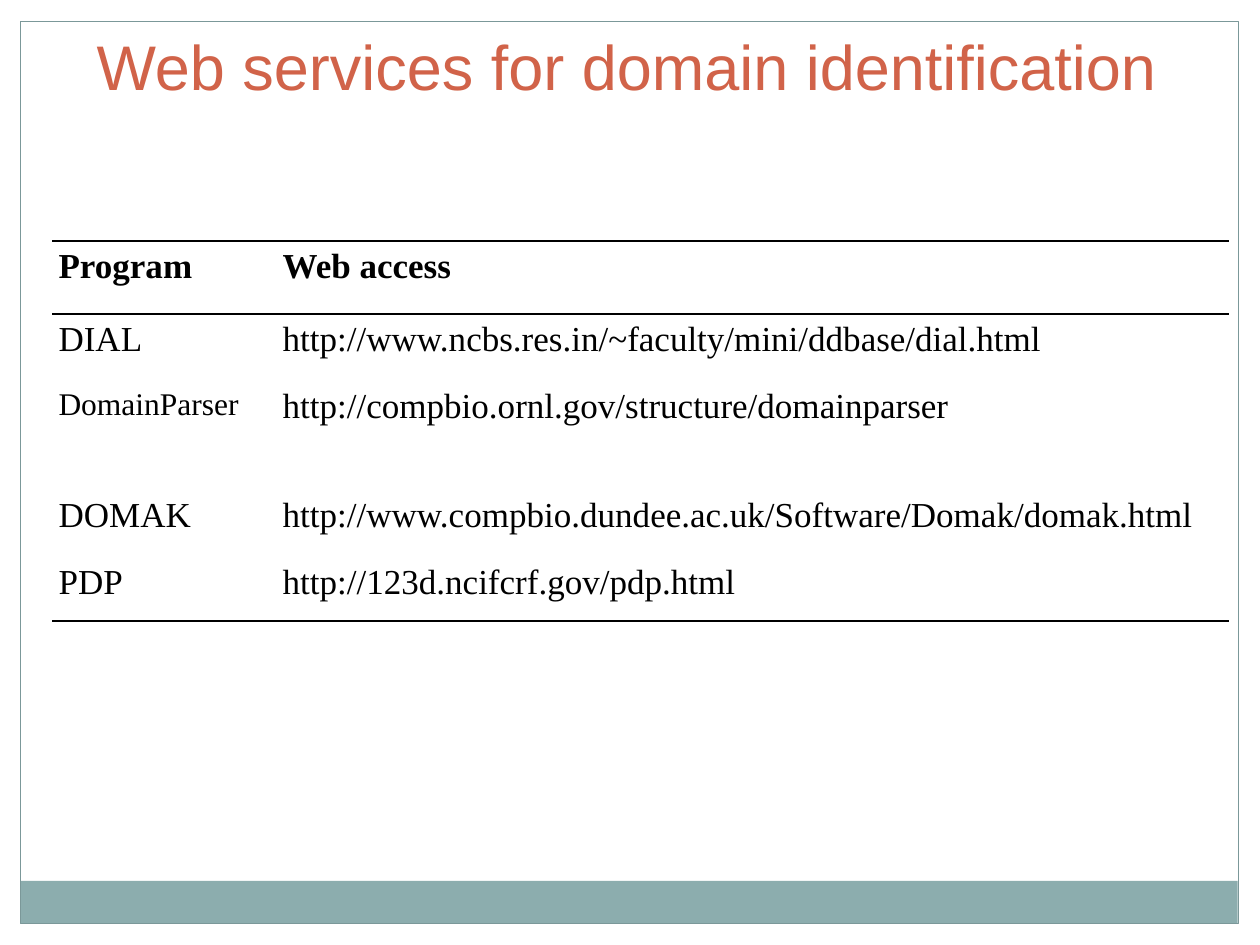
from lxml import etree
from pptx import Presentation
from pptx import util as u
from pptx.dml.color import RGBColor
from pptx.enum import shapes, text
from pptx.oxml import ns

PAGE_WIDTH, PAGE_HEIGHT, MARGIN = 25.4, 19.05, 0.42
SERVICES = [
    ("Program", "Web access"),
    ("DIAL", "http://www.ncbs.res.in/~faculty/mini/ddbase/dial.html"),
    ("DomainParser", "http://compbio.ornl.gov/structure/domainparser"),
    ("DOMAK", "http://www.compbio.dundee.ac.uk/Software/Domak/domak.html"),
    ("PDP", "http://123d.ncifcrf.gov/pdp.html"),
]
COLUMN_WIDTHS = [4.52, 19.2]
ROW_HEIGHTS = [1.47, 1.35, 2.19, 1.35, 1.3]


def colour(hex_value):
    return RGBColor.from_string(hex_value)


class SlideBuilder:
    INK, ACCENT, BAND, FRAME, PAPER = (
        "000000", "D16349", "8CADAE", "7B9899", "FFFFFF")
    TITLE_FONT, BODY_FONT = "Arial", "Times New Roman"
    INSET = u.Cm(0.13)

    def __init__(self, slide):
        self.slide = slide

    def format_run(self, paragraph, words, hex_value, **values):
        run = paragraph.add_run()
        run.text = words
        run.font.color.rgb = colour(hex_value)
        for name, value in values.items():
            setattr(run.font, name, value)

    def set_insets(self, owner):
        for side in ("left", "right", "top", "bottom"):
            setattr(owner, f"margin_{side}", self.INSET)

    def rectangle(self, place, fill=None, line=None):
        box = self.slide.shapes.add_shape(
            shapes.MSO_SHAPE.RECTANGLE, *map(u.Cm, place))
        box.shadow.inherit = False
        if fill:
            box.fill.solid()
            box.fill.fore_color.rgb = colour(fill)
        else:
            box.fill.background()
        if line:
            box.line.color.rgb = colour(line)
            box.line.width = u.Pt(0.75)
        else:
            box.line.fill.background()

    def title(self, place, words):
        frame = self.slide.shapes.add_textbox(*map(u.Cm, place)).text_frame
        self.set_insets(frame)
        frame.word_wrap = False
        frame.auto_size = text.MSO_AUTO_SIZE.SHAPE_TO_FIT_TEXT
        self.format_run(frame.paragraphs[0], words, self.ACCENT,
                        size=u.Pt(36), name=self.TITLE_FONT)

    def borders(self, cell, ruled_sides):
        properties = cell._tc.get_or_add_tcPr()
        for index, side in enumerate("LRTB"):
            line = etree.Element(ns.qn(f"a:ln{side}"))
            if side in ruled_sides:
                line.set("w", str(u.Pt(1)))
                fill = etree.SubElement(line, ns.qn("a:solidFill"))
                etree.SubElement(fill, ns.qn("a:srgbClr"), val=self.INK)
            else:
                etree.SubElement(line, ns.qn("a:noFill"))
            properties.insert(index, line)

    def table(self, left, top, rows, widths, heights):
        table = self.slide.shapes.add_table(
            len(rows), len(widths), u.Cm(left), u.Cm(top),
            u.Cm(sum(widths)), u.Cm(sum(heights))).table
        table.first_row = table.horz_banding = False
        for column, width in zip(table.columns, widths):
            column.width = u.Cm(width)
        # Rules run above and below the header and below the last row
        ruled = {0: "TB", 1: "T", len(rows) - 1: "B"}
        for r, (row, height) in enumerate(zip(rows, heights)):
            table.rows[r].height = u.Cm(height)
            for c, words in enumerate(row):
                cell = table.cell(r, c)
                self.set_insets(cell)
                cell.fill.background()
                self.borders(cell, ruled.get(r, ""))
                size = 18 if words == "DomainParser" else 20
                self.format_run(cell.text_frame.paragraphs[0], words, self.INK,
                                size=u.Pt(size), name=self.BODY_FONT,
                                bold=r == 0)


def main():
    deck = Presentation()
    deck.slide_width, deck.slide_height = u.Cm(PAGE_WIDTH), u.Cm(PAGE_HEIGHT)
    page = SlideBuilder(deck.slides.add_slide(deck.slide_layouts[6]))

    # White page margins: top, right, left
    for margin in ((0, 0, PAGE_WIDTH, MARGIN),
                   (PAGE_WIDTH - MARGIN, 0, MARGIN, PAGE_HEIGHT),
                   (0, 0, MARGIN, PAGE_HEIGHT)):
        page.rectangle(margin, fill=page.PAPER)

    # Footer band and page frame
    page.rectangle((0.41, 17.76, 24.54, 0.86), fill=page.BAND)
    page.rectangle((MARGIN, 0.43, 24.55, 18.19), line=page.FRAME)

    # Table of services
    page.table(1.05, 4.86, SERVICES, COLUMN_WIDTHS, ROW_HEIGHTS)

    # Heading
    page.title((1.82, 0.43, 21.67, 1.7), "Web services for domain identification")

    deck.save("out.pptx")


if __name__ == "__main__":
    main()
